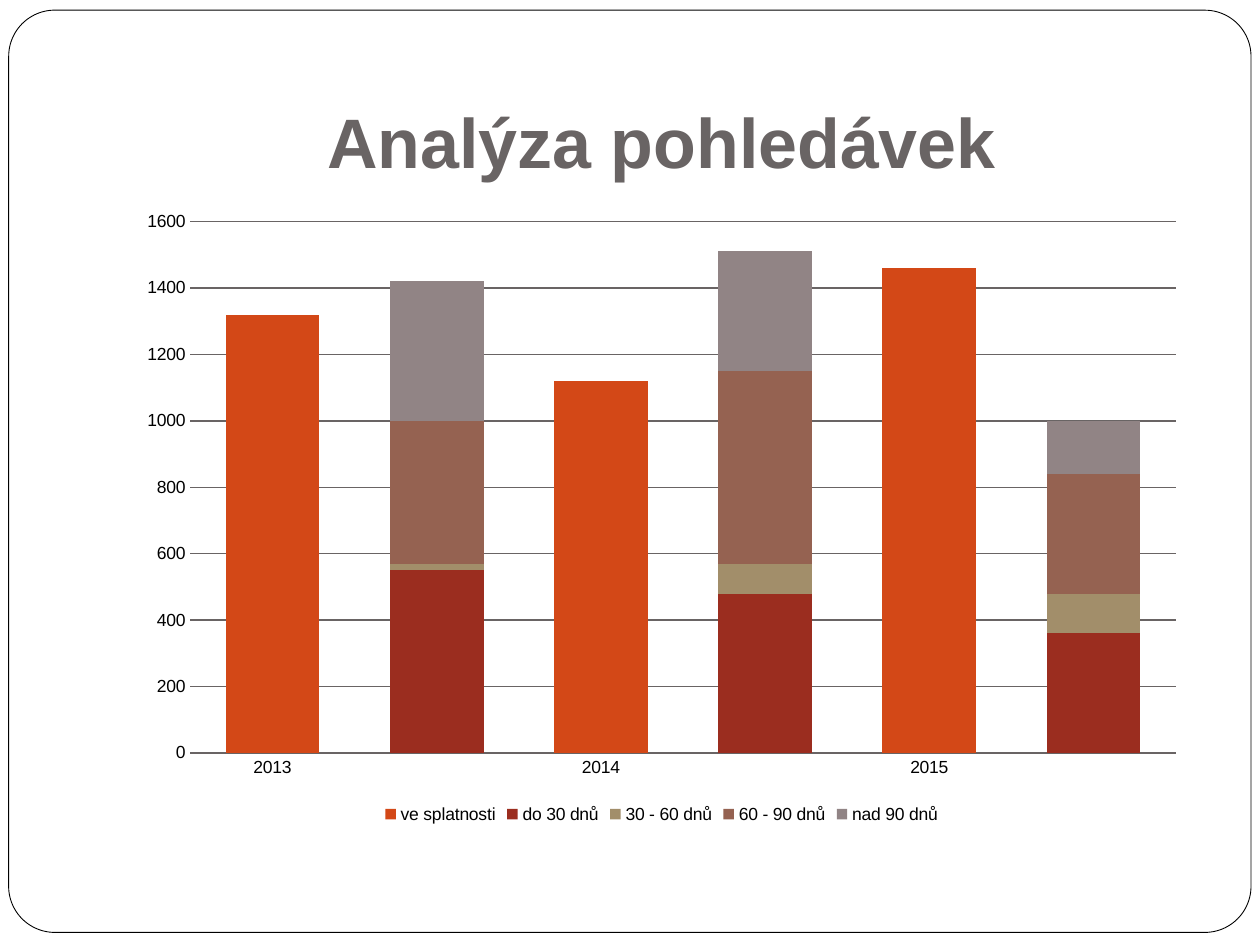
"""Build the receivables analysis slide with a stacked column chart."""
from pptx import Presentation
from pptx import util as u
from pptx.chart.data import CategoryChartData
from pptx.dml.color import RGBColor
from pptx.enum import chart as ch, shapes, text

THEME = {
    "font": "Arial",
    "paper": "FFFFFF",
    "ink": "000000",
    "grid": "696464",
    "title": {"size": 40, "color": "696464", "bold": True},
    "label": {"size": 10, "color": "000000", "bold": False},
}
TITLE = "Analýza pohledávek"
YEARS = ["2013", "2014", "2015"]
DUE = ("ve splatnosti", "D34817", [1320, 1120, 1460])
OVERDUE = [
    ("do 30 dnů", "9B2D1F", [550, 480, 360]),
    ("30 - 60 dnů", "A28E6A", [20, 90, 120]),
    ("60 - 90 dnů", "956251", [430, 580, 360]),
    ("nad 90 dnů", "918485", [420, 360, 160]),
]
FRAME_BOX = (5, 5.8, 709.9, 527)
TITLE_BOX = (72, 21.6, 612, 90)
CHART_BOX = (72, 113.8, 612, 360)


def rgb(value):
    return RGBColor.from_string(value)


def points(box):
    return [u.Pt(v) for v in box]


def set_all(obj, values):
    for name, value in values.items():
        setattr(obj, name, value)


def set_font(font, style):
    set_all(font, {"name": THEME["font"], "size": u.Pt(style["size"]), "bold": style["bold"]})
    font.color.rgb = rgb(style["color"])


def add_frame(s):
    sp = s.shapes.add_shape(shapes.MSO_SHAPE.ROUNDED_RECTANGLE, *points(FRAME_BOX))
    sp.adjustments[0] = 0.05
    sp.shadow.inherit = False
    sp.fill.solid()
    sp.fill.fore_color.rgb = rgb(THEME["paper"])
    sp.line.color.rgb = rgb(THEME["ink"])
    sp.line.width = u.Pt(0.5)


def add_title(s):
    tf = s.shapes.add_textbox(*points(TITLE_BOX)).text_frame
    set_all(tf, {
        "word_wrap": True,
        "vertical_anchor": text.MSO_ANCHOR.BOTTOM,
        "margin_bottom": u.Pt(7.2),
    })
    p = tf.paragraphs[0]
    p.alignment = text.PP_ALIGN.CENTER
    r = p.add_run()
    r.text = TITLE
    set_font(r.font, THEME["title"])


def add_columns(s):
    data = CategoryChartData()
    data.categories = [c for year in YEARS for c in (year, "")]
    name, _, values = DUE
    data.add_series(name, [v for value in values for v in (value, None)])
    for name, _, values in OVERDUE:
        data.add_series(name, [v for value in values for v in (None, value)])

    chart = s.shapes.add_chart(
        ch.XL_CHART_TYPE.COLUMN_STACKED, *points(CHART_BOX), data).chart
    set_font(chart.font, THEME["label"])
    set_all(chart, {"has_title": False, "has_legend": True})
    set_all(chart.legend, {
        "position": ch.XL_LEGEND_POSITION.BOTTOM,
        "include_in_layout": False,
    })

    plot = chart.plots[0]
    set_all(plot, {"gap_width": 75, "overlap": 100, "vary_by_categories": False})
    for series, (_, color, _) in zip(plot.series, [DUE, *OVERDUE]):
        series.format.fill.solid()
        series.format.fill.fore_color.rgb = rgb(color)

    for axis in (chart.category_axis, chart.value_axis):
        set_all(axis, {
            "major_tick_mark": ch.XL_TICK_MARK.NONE,
            "minor_tick_mark": ch.XL_TICK_MARK.NONE,
        })
    set_all(chart.value_axis, {
        "minimum_scale": 0,
        "maximum_scale": 1600,
        "major_unit": 200,
        "has_major_gridlines": True,
    })
    chart.value_axis.format.line.fill.background()
    for lined in (chart.category_axis, chart.value_axis.major_gridlines):
        lined.format.line.color.rgb = rgb(THEME["grid"])
        lined.format.line.width = u.Pt(0.75)


def main():
    prs = Presentation()
    set_all(prs, {"slide_width": u.Pt(720), "slide_height": u.Pt(540)})
    s = prs.slides.add_slide(prs.slide_layouts[6])
    for add in (add_frame, add_title, add_columns):
        add(s)
    prs.save("out.pptx")


if __name__ == "__main__":
    main()
